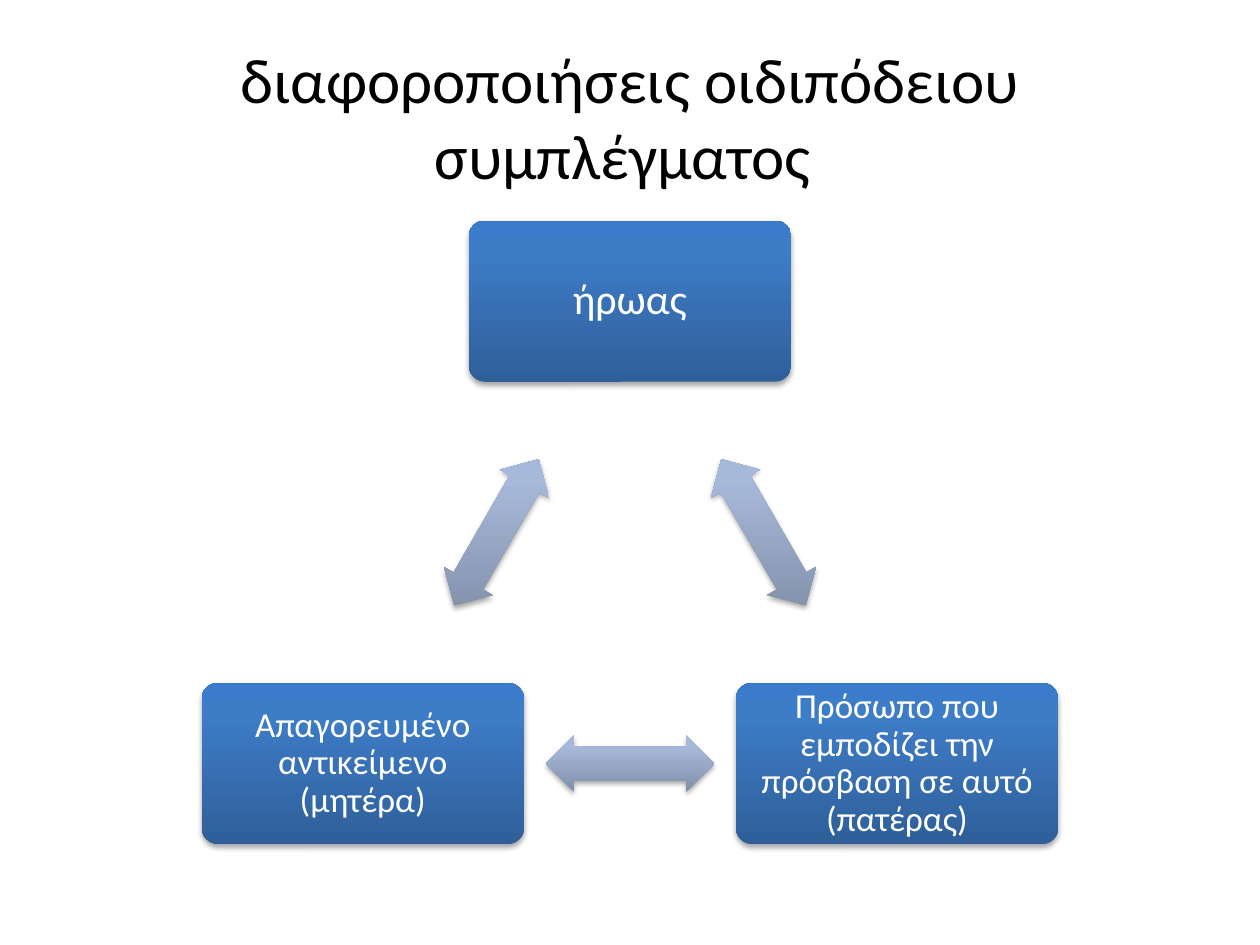
import math
from dataclasses import dataclass
from itertools import pairwise

from lxml import etree
from pptx import Presentation
from pptx.dml.color import RGBColor
from pptx.enum.shapes import MSO_SHAPE
from pptx.enum.text import MSO_ANCHOR, PP_ALIGN
from pptx.oxml.ns import qn
from pptx.util import Inches, Pt

ROUNDED = MSO_SHAPE.ROUNDED_RECTANGLE
DOUBLE_ARROW = MSO_SHAPE.LEFT_RIGHT_ARROW
MIDDLE = MSO_ANCHOR.MIDDLE
CENTER = PP_ALIGN.CENTER


@dataclass(frozen=True)
class Theme:
    font: str = "Calibri"
    title_color: str = "000000"
    node_color: str = "FFFFFF"
    shadow_color: str = "000000"
    title_size: int = 36
    hero_size: int = 24
    node_size: int = 20
    node_stops: tuple = ((0, "2F5F99"), (80, "3D7CC7"), (100, "3A7CCB"))
    arrow_stops: tuple = ((0, "818FA8"), (80, "A7B9DA"), (100, "A7BADC"))


THEME = Theme()
NODE_W, NODE_H = 2.56, 1.28
ARROW_W, ARROW_H = 1.34, 0.45
NODES = (
    ((5, 2.39), "ήρωας", THEME.hero_size, 0.1),
    ((7.12, 6.06), "Πρόσωπο που εμποδίζει την πρόσβαση σε αυτό (πατέρας)",
     THEME.node_size, 0.08),
    ((2.88, 6.06), "Απαγορευμένο αντικείμενο (μητέρα)", THEME.node_size, 0.08),
)


def write_text(sp, text, size, color, spacing=1.0):
    tf = sp.text_frame
    tf.word_wrap = True
    tf.vertical_anchor = MIDDLE
    p = tf.paragraphs[0]
    p.alignment = CENTER
    p.line_spacing = spacing
    r = p.add_run()
    r.text = text
    font = {"name": THEME.font, "size": Pt(size)}
    for name, value in font.items():
        setattr(r.font, name, value)
    r.font.color.rgb = RGBColor.from_string(color)


def add_color(parent, color):
    return etree.SubElement(parent, qn("a:srgbClr"), val=color)


def set_gradient(sp, stops):
    sp.fill.gradient()
    sp.fill.gradient_angle = 90
    grad = sp._element.spPr.find(qn("a:gradFill"))
    grad.set("rotWithShape", "0")
    gs_list = grad.find(qn("a:gsLst"))
    for gs in list(gs_list):
        gs_list.remove(gs)
    for position, color in stops:
        gs = etree.SubElement(gs_list, qn("a:gs"), pos=str(position * 1000))
        add_color(gs, color)


def set_shadow(sp):
    sp.shadow.inherit = False
    effects = sp._element.spPr.find(qn("a:effectLst"))
    shadow = etree.SubElement(
        effects, qn("a:outerShdw"), blurRad=str(Pt(3.1)),
        dist=str(Pt(1.8)), dir="5400000", rotWithShape="0")
    color = add_color(shadow, THEME.shadow_color)
    etree.SubElement(color, qn("a:alpha"), val="35000")


def add_glossy_shape(s, kind, center, width, height, adjustments, stops):
    x, y = center
    sp = s.shapes.add_shape(kind, Inches(x - width / 2), Inches(y - height / 2),
                            Inches(width), Inches(height))
    for i, value in enumerate(adjustments):
        sp.adjustments[i] = value
    set_gradient(sp, stops)
    sp.line.fill.background()
    set_shadow(sp)
    return sp


def add_title(s, text):
    sp = s.shapes.add_textbox(Inches(0.5), Inches(0.3), Inches(9), Inches(1.25))
    write_text(sp, text, THEME.title_size, THEME.title_color)


def add_node(s, center, text, size, inset):
    sp = add_glossy_shape(s, ROUNDED, center, NODE_W, NODE_H, (0.1,),
                          THEME.node_stops)
    for side in ("left", "top", "right", "bottom"):
        setattr(sp.text_frame, f"margin_{side}", Inches(inset))
    write_text(sp, text, size, THEME.node_color, 0.9)


def add_arrow(s, start, end):
    (x1, y1), (x2, y2) = start, end
    sp = add_glossy_shape(s, DOUBLE_ARROW, ((x1 + x2) / 2, (y1 + y2) / 2),
                          ARROW_W, ARROW_H, (0.6, 0.5), THEME.arrow_stops)
    sp.rotation = round(math.degrees(math.atan2(y2 - y1, x2 - x1))) % 360


def main():
    prs = Presentation()
    prs.slide_width, prs.slide_height = Inches(10), Inches(7.5)
    s = prs.slides.add_slide(prs.slide_layouts[6])
    add_title(s, "διαφοροποιήσεις οιδιπόδειου συμπλέγματος ")
    for node in NODES:
        add_node(s, *node)
    centers = [node[0] for node in NODES]
    for start, end in pairwise(centers + centers[:1]):
        add_arrow(s, start, end)
    prs.save("out.pptx")


if __name__ == "__main__":
    main()
